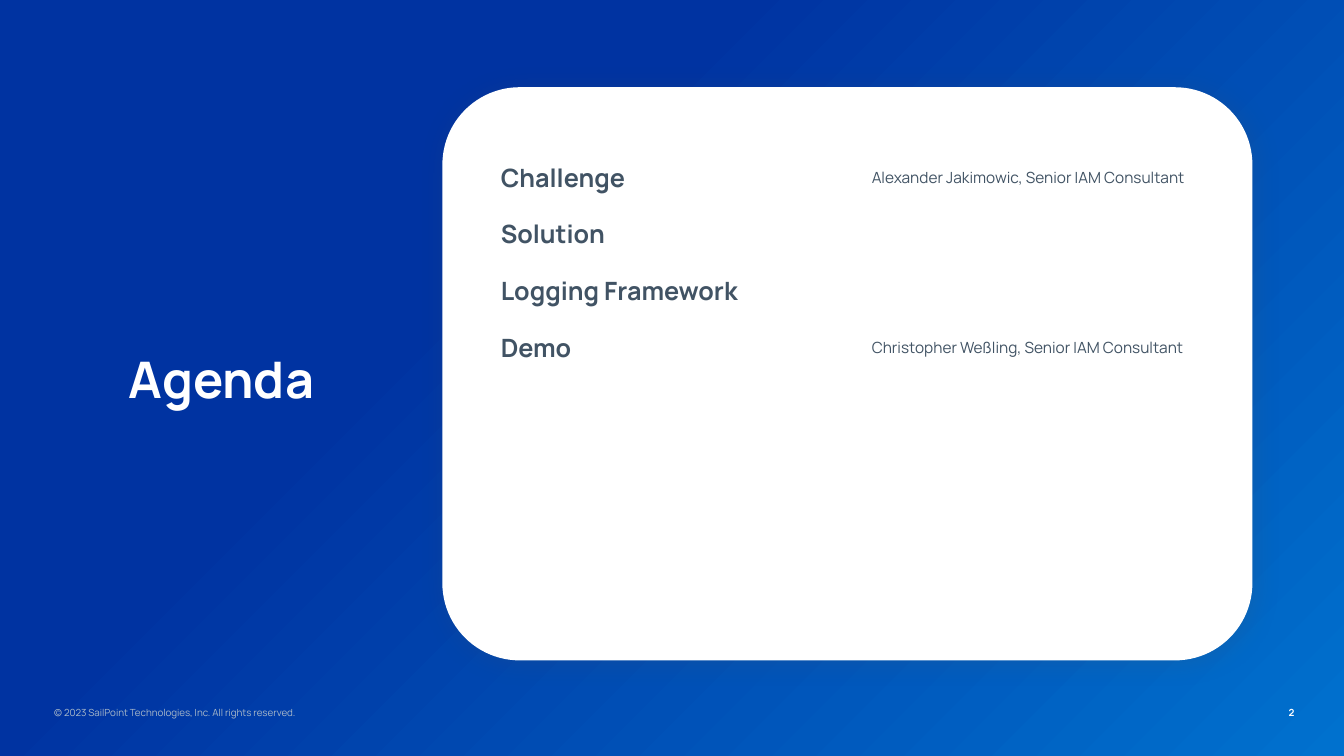
from lxml import etree
from pptx import Presentation
from pptx.dml.color import RGBColor
from pptx.enum.shapes import MSO_SHAPE as Shape
from pptx.enum.text import MSO_ANCHOR as Anchor, PP_ALIGN as Align
from pptx.oxml.ns import qn
from pptx.util import Pt

FONT = "Manrope"
WHITE, SLATE, MIST = "FFFFFF", "415364", "ABBAC9"
NAVY, AZURE = "0033A1", "0071CE"
AGENDA = [
    ("Challenge", "Alexander Jakimowic, Senior IAM Consultant"),
    ("Solution", ""),
    ("Logging Framework", ""),
    ("Demo", "Christopher Weßling, Senior IAM Consultant"),
]
ROWS = 8


def color(code):
    return RGBColor.from_string(code)


def style(frame, size, code, bold=False, align=Align.LEFT):
    for para in frame.paragraphs:
        para.alignment = align
        for run in para.runs:
            font = run.font
            font.name, font.size, font.bold = FONT, Pt(size), bold
            font.color.rgb = color(code)


def paint(slide):
    """Fill the background with a diagonal gradient."""
    fill = slide.background.fill
    fill.gradient()
    fill.gradient_angle = 315
    for stop, (place, code) in zip(fill.gradient_stops, [(0.35, NAVY), (1, AZURE)]):
        stop.position = place
        stop.color.rgb = color(code)


def shade(shape):
    """Give a shape a soft shadow to the lower right."""
    shape.shadow.inherit = False
    effects = shape._element.spPr.find(qn("a:effectLst"))
    outer = etree.SubElement(effects, qn("a:outerShdw"), blurRad=str(Pt(18.4)),
                             dist=str(Pt(3)), dir="2700000", algn="tl",
                             rotWithShape="0")
    tint = etree.SubElement(outer, qn("a:srgbClr"), val=SLATE)
    etree.SubElement(tint, qn("a:alpha"), val="20000")


def add_card(slide, x, y, w, h):
    card = slide.shapes.add_shape(Shape.ROUNDED_RECTANGLE, Pt(x), Pt(y), Pt(w), Pt(h))
    card.adjustments[0] = 0.135
    card.fill.solid()
    card.fill.fore_color.rgb = color(WHITE)
    card.line.fill.background()
    shade(card)


def add_text(slide, text, x, y, w, h, *look):
    frame = slide.shapes.add_textbox(Pt(x), Pt(y), Pt(w), Pt(h)).text_frame
    frame.word_wrap = True
    frame.vertical_anchor = Anchor.MIDDLE
    frame.text = text
    style(frame, *look)


def add_agenda(slide, x, y, widths, height):
    table = slide.shapes.add_table(ROWS, len(widths), Pt(x), Pt(y),
                                   Pt(sum(widths)), Pt(ROWS * height)).table
    table.first_row = table.horz_banding = False
    for col, width in zip(table.columns, widths):
        col.width = Pt(width)
    for row in table.rows:
        row.height = Pt(height)
    for cell in table.iter_cells():
        cell.fill.background()
        cell.vertical_anchor = Anchor.MIDDLE
    for i, (topic, host) in enumerate(AGENDA):
        left, right = table.cell(i, 0), table.cell(i, 1)
        left.text_frame.text = topic
        style(left.text_frame, 18, SLATE, True)
        if host:
            right.text_frame.text = host
            style(right.text_frame, 11, SLATE)


def main():
    deck = Presentation()
    deck.slide_width, deck.slide_height = Pt(960), Pt(540)
    slide = deck.slides.add_slide(deck.slide_layouts[6])
    paint(slide)
    add_card(slide, 316, 62.3, 578.6, 409.4)
    add_text(slide, "Agenda", 31.7, 206, 252.7, 129, 36, WHITE, True, Align.CENTER)
    add_text(slide, "2", 869, 499.7, 62.7, 18, 7, WHITE, True, Align.RIGHT)
    add_text(slide, "© 2023 SailPoint Technologies, Inc. All rights reserved.",
             31.7, 499.7, 305.3, 18, 7, MIST)
    add_agenda(slide, 350.5, 106.5, (265, 254), 40.6)
    deck.save("out.pptx")


if __name__ == "__main__":
    main()
